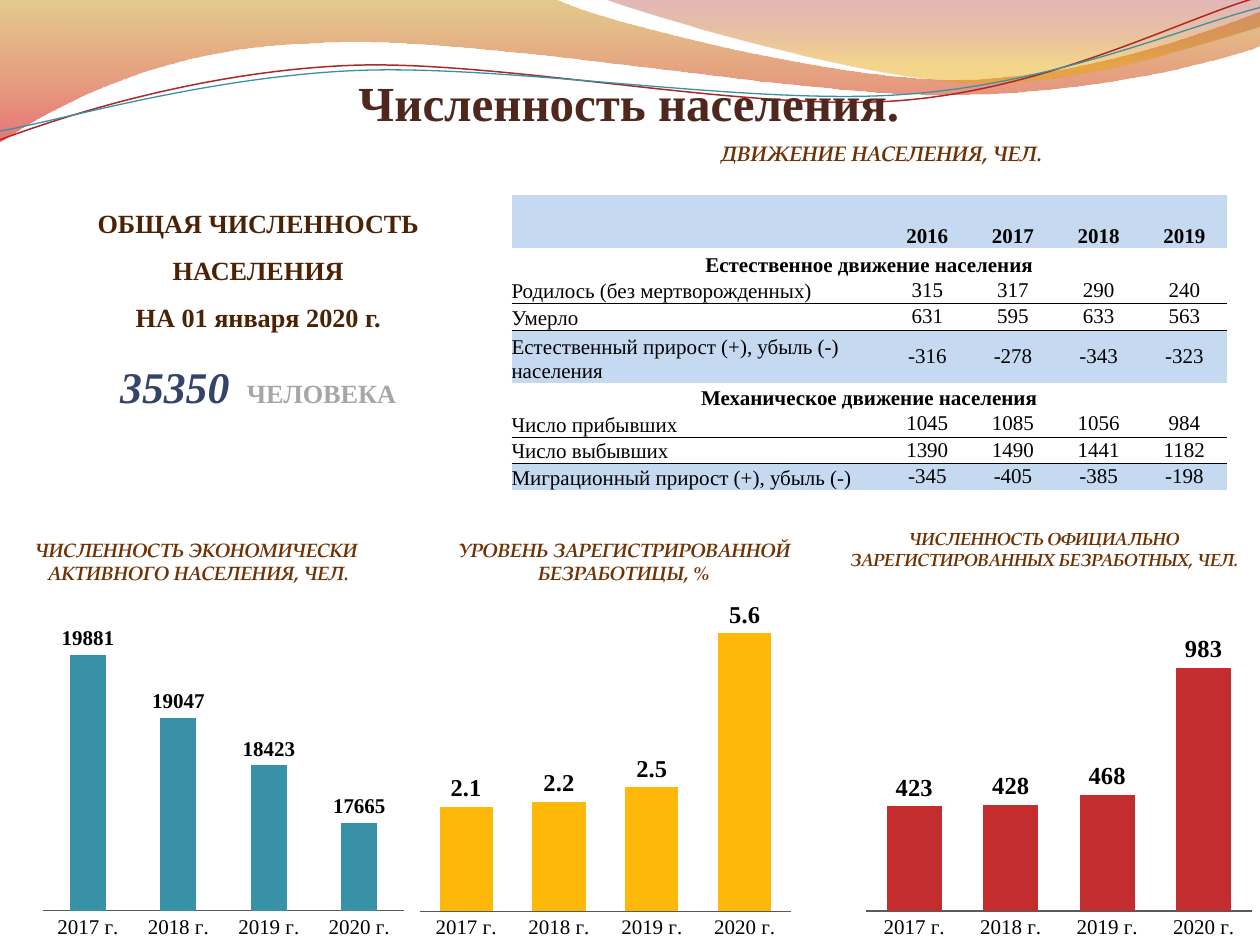
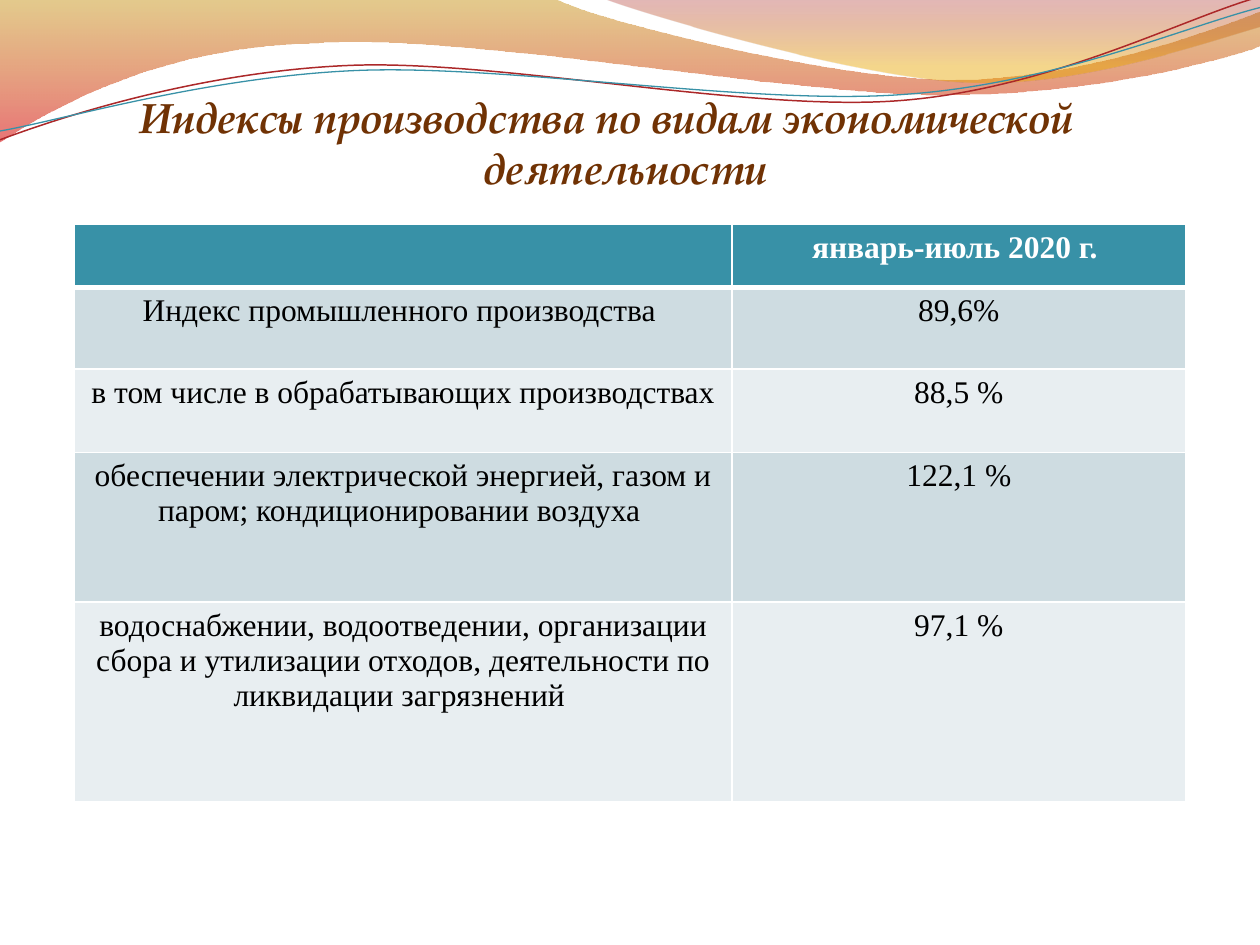
from lxml import etree
from pptx import Presentation
from pptx import util as u
from pptx.chart import data as cd
from pptx.dml.color import RGBColor
from pptx.enum import chart as ce, text as te
from pptx.oxml import parse_xml
from pptx.oxml.ns import nsdecls, qn

# Shared look
SERIF, PAGE = "Times New Roman", "TeX Gyre Pagella"
HEX = dict(gold="C38B00", rose="D60305", wine="A11112", amber="E9A600",
           red="AC2829", teal="3891A7", sun="FEB80A", brick="C32D2E",
           title="4F271C", brown="703204", dark="4B2203", navy="35436A",
           gray="A6A6A6", axis="595959", black="000000", white="FFFFFF",
           sky="C5D9F1", band="CEDCE1", pale="E8EEF1")
HEAD = dict(font=PAGE, color="brown", bold=True, italic=True)
NO_STYLE = "{2D5ABB26-0587-4C30-8999-92F81FD0307C}"
INSET = (.1, .05, .1, .05)

# Waves: start point, then lines (one point) or curves (three points)
BANDS = [
    ([(0, 0), [(4.4, -.01)], [(4.76, .17), (6.64, .63), (7.58, .63)],
      [(8.53, .63), (9.58, .26), (10, .09)], [(10.01, .36)],
      [(9.83, .44), (8.7, .76), (7.46, .75)],
      [(6.22, .75), (3.82, .28), (2.57, .34)],
      [(1.29, .36), (.46, .83), (-.01, 1.13)]],
     [(0, "gold", 45), (100, "rose", 55)]),
    ([(4.79, -.01), [(5.09, .11), (6.82, .62), (7.69, .65)],
      [(8.56, .69), (9.61, .32), (10, .21)], [(10, 0)]],
     [(0, "wine", 30), (80, "amber", 45)]),
]
LINES = [
    ([(0, 1.11), [(.48, .93), (1.58, .57), (2.77, .52)],
      [(3.95, .47), (5.93, .89), (7.13, .8)],
      [(8.33, .71), (9.38, .15), (9.98, -.02)]], "red", .85),
    ([(0, 1.04), [(.47, .96), (1.64, .61), (2.83, .56)],
      [(4.03, .51), (5.97, .84), (7.17, .75)],
      [(8.36, .67), (9.41, .21), (10, .06)]], "teal", .75),
]

# Slide 1 content
TOTAL = ["ОБЩАЯ ЧИСЛЕННОСТЬ НАСЕЛЕНИЯ", "НА 01 января 2020 г.",
         [("35350 ", dict(size=25, color="navy", italic=True)),
          (" ЧЕЛОВЕКА", dict(color="gray"))]]
HEADS = [
    ((.12, 4.22, 2.91, .47), 11,
     ["ЧИСЛЕННОСТЬ ЭКОНОМИЧЕСКИ ", "АКТИВНОГО НАСЕЛЕНИЯ, ЧЕЛ."]),
    ((3.5, 4.22, 2.91, .47), 11,
     ["УРОВЕНЬ ЗАРЕГИСТРИРОВАННОЙ БЕЗРАБОТИЦЫ, %"]),
    ((6.57, 4.14, 3.43, .44), 10,
     ["ЧИСЛЕННОСТЬ ОФИЦИАЛЬНО ЗАРЕГИСТИРОВАННЫХ БЕЗРАБОТНЫХ, ЧЕЛ."]),
]
MOVES = [
    ["", "2016", "2017", "2018", "2019"],
    ["Естественное движение населения"],
    ["Родилось (без мертворожденных)", "315", "317", "290", "240"],
    ["Умерло", "631", "595", "633", "563"],
    ["Естественный прирост (+), убыль (-) населения",
     "-316", "-278", "-343", "-323"],
    ["Механическое движение населения"],
    ["Число прибывших", "1045", "1085", "1056", "984"],
    ["Число выбывших", "1390", "1490", "1441", "1182"],
    ["Миграционный прирост (+), убыль (-)", "-345", "-405", "-385", "-198"],
]
SHADED, RULED = (0, 4, 8), (2, 3, 6, 7)
YEARS = ["2017 г.", "2018 г.", "2019 г.", "2020 г."]
CHARTS = [  # place, values, colour, axis range, gap, label size
    ((.28, 4.77, 2.99, 2.73), (19881, 19047, 18423, 17665),
     "teal", (16500, 20500), 150, 12),
    ((3.27, 4.77, 3.07, 2.73), (2.1, 2.2, 2.5, 5.6), "sun", (0, 6), 75, 14),
    ((6.81, 4.82, 3.19, 2.68), (423, 428, 468, 983),
     "brick", (0, 1200), 75, 14),
]

# Slide 2 content
INDEX = [
    ("", "январь-июль 2020 г. "),
    ("Индекс промышленного производства ", "89,6%"),
    ("в том числе в обрабатывающих производствах", "88,5 %"),
    ("обеспечении электрической энергией, газом и паром; "
     "кондиционировании воздуха ", "122,1 %"),
    ("водоснабжении, водоотведении, организации сбора и утилизации отходов, "
     "деятельности по ликвидации загрязнений ", "97,1 %"),
]


def rgb(name):
    return RGBColor.from_string(HEX[name])


def box(place):
    return [u.Inches(v) for v in place]


def style(font, size=12, face=SERIF, color="black", bold=False,
          italic=False):
    font.name, font.size, font.bold, font.italic = (
        face, u.Pt(size), bold, italic)
    font.color.rgb = rgb(color)


def write(frame, paras, font=SERIF, align="CENTER", space=1, indent=0, **fmt):
    """Fill a frame; a paragraph is a string or a list of (text, format)."""
    for i, runs in enumerate(paras):
        para = frame.add_paragraph() if i else frame.paragraphs[0]
        para.alignment = te.PP_ALIGN[align]
        para.line_spacing = space
        para.space_before = u.Pt(0)
        if indent:
            props = para._p.get_or_add_pPr()
            props.set("marL", str(u.Inches(indent)))
            props.set("indent", str(-u.Inches(indent)))
        for words, extra in [(runs, {})] if isinstance(runs, str) else runs:
            run = para.add_run()
            run.text = words
            style(run.font, face=font, **{**fmt, **extra})


def seat(part, anchor, inset):
    """Set anchor and margins of a text frame or a table cell."""
    part.vertical_anchor = te.MSO_ANCHOR[anchor]
    (part.margin_left, part.margin_top,
     part.margin_right, part.margin_bottom) = box(inset)


def fit(shape, paras, anchor="TOP", inset=INSET, **fmt):
    frame = shape.text_frame
    frame.word_wrap = True
    frame.auto_size = te.MSO_AUTO_SIZE.NONE
    seat(frame, anchor, inset)
    write(frame, paras, **fmt)


def label(slide, place, paras, **fmt):
    fit(slide.shapes.add_textbox(*box(place)), paras, **fmt)


def title(slide, place, words, **fmt):
    shape = slide.shapes.title
    shape.left, shape.top, shape.width, shape.height = box(place)
    fit(shape, [words], **fmt)


def put(cell, words, anchor="TOP", inset=INSET, **fmt):
    seat(cell, anchor, inset)
    write(cell.text_frame, [words], **fmt)


def wave(slide, start, *steps, close=False):
    """Draw an outline through the end points, then bend its curves."""
    pen = slide.shapes.build_freeform(*box(start))
    pen.add_line_segments([box(step[-1]) for step in steps], close=close)
    shape = pen.convert_to_shape()
    shape.shadow.inherit = False
    left, top = shape.left, shape.top
    for line, step in zip(list(shape.element.iter(qn("a:lnTo"))), steps):
        if len(step) == 3:
            line.tag = qn("a:cubicBezTo")
            line.clear()
            for x, y in map(box, step):
                etree.SubElement(line, qn("a:pt"), x=str(x - left),
                                 y=str(y - top))
    return shape


def waves(slide, master):
    """Draw the header waves and hand them to the master."""
    for steps, stops in BANDS:
        shape = wave(slide, *steps, close=True)
        shape.line.fill.background()
        marks = "".join(
            f'<a:gs pos="{pos * 1000}"><a:srgbClr val="{HEX[tone]}">'
            f'<a:alpha val="{alpha * 1000}"/></a:srgbClr></a:gs>'
            for pos, tone, alpha in stops)
        shape.fill.background()
        blank = shape.element.spPr.find(qn("a:noFill"))
        blank.getparent().replace(blank, parse_xml(
            f'<a:gradFill {nsdecls("a")}><a:gsLst>{marks}</a:gsLst>'
            '<a:lin ang="5400000" scaled="0"/></a:gradFill>'))
        master.shapes.element.append(shape.element)
    for steps, tone, width in LINES:
        shape = wave(slide, *steps)
        shape.fill.background()
        shape.line.color.rgb, shape.line.width = rgb(tone), u.Pt(width)
        master.shapes.element.append(shape.element)


def grid(slide, spot, cols, rows):
    shape = slide.shapes.add_table(len(rows), len(cols), *box(spot),
                                   *box((sum(cols), sum(rows))))
    table = shape.table
    table._tbl.tblPr.find(qn("a:tableStyleId")).text = NO_STYLE
    for parts, sizes, side in ((table.columns, cols, "width"),
                               (table.rows, rows, "height")):
        for part, size in zip(parts, sizes):
            setattr(part, side, u.Inches(size))
    return table


def paint(cell, fill=None, **edges):
    """Set the borders (side=(colour, points)), then the fill."""
    props = cell._tc.get_or_add_tcPr()
    for side in "LRTB":
        line = etree.SubElement(props, qn("a:ln" + side))
        if side in edges:
            tone, width = edges[side]
            line.set("w", str(u.Pt(width)))
            solid = etree.SubElement(line, qn("a:solidFill"))
            etree.SubElement(solid, qn("a:srgbClr"), val=HEX[tone])
        else:
            etree.SubElement(line, qn("a:noFill"))
    if fill:
        cell.fill.solid()
        cell.fill.fore_color.rgb = rgb(fill)
    else:
        cell.fill.background()


def bars(slide, place, vals, tone, span, gap, size):
    data = cd.CategoryChartData()
    data.categories = YEARS
    data.add_series("Series 1", vals)
    chart = slide.shapes.add_chart(ce.XL_CHART_TYPE.COLUMN_CLUSTERED,
                                   *box(place), data).chart
    chart.has_legend = chart.has_title = False
    style(chart.font, 10, PAGE)
    years, scale = chart.category_axis, chart.value_axis
    years.major_tick_mark = ce.XL_TICK_MARK.NONE
    years.format.line.color.rgb = rgb("axis")
    style(years.tick_labels.font)
    scale.visible = scale.has_major_gridlines = False
    scale.minimum_scale, scale.maximum_scale = span
    plot = chart.plots[0]
    plot.gap_width, plot.vary_by_categories = gap, False
    fill = plot.series[0].format.fill
    fill.solid()
    fill.fore_color.rgb = rgb(tone)
    plot.has_data_labels = True
    tags = plot.data_labels
    tags.show_value = True
    tags.position = ce.XL_LABEL_POSITION.OUTSIDE_END
    style(tags.font, size, bold=True)


def people(slide):
    title(slide, (.49, 0, 9, 1.04), "Численность населения.", size=28,
          color="title", bold=True, anchor="BOTTOM", inset=(0, .05, 0, 0))
    label(slide, (.2, 1.47, 3.7, 1.87), TOTAL, size=15, color="dark",
          bold=True, space=1.5)
    label(slide, (5.08, 1.07, 3.34, .3), ["ДВИЖЕНИЕ НАСЕЛЕНИЯ, ЧЕЛ."],
          size=12, inset=(.59, .05, .1, .05), **HEAD)
    for place, size, paras in HEADS:
        label(slide, place, paras, size=size, **HEAD)

    # Population movement table
    table = grid(slide, (4.06, 1.55), [2.96] + [.68] * 4,
                 [.42, .23, .21, .21, .42, .22] + [.21] * 3)
    for r, row in enumerate(MOVES):
        section = len(row) == 1
        if section:
            table.cell(r, 0).merge(table.cell(r, 4))
        edges = {side: ("black", .5) for side, ruled in
                 (("T", r - 1 in RULED), ("B", r in RULED)) if ruled}
        for c in range(5):
            paint(table.cell(r, c), "sky" if r in SHADED else None, **edges)
        top = r == 0 or section
        for c, words in enumerate(row):
            put(table.cell(r, c), words, inset=(0, 0, 0, 0), bold=top,
                align="CENTER" if c or top else "LEFT",
                anchor="MIDDLE" if c and not top else "BOTTOM")

    for item in CHARTS:
        bars(slide, *item)


def output(slide):
    title(slide, (.12, .68, 9.39, .71),
          "Индексы производства по видам экономической деятельности",
          size=24, indent=.3, **HEAD)
    table = grid(slide, (.59, 1.78), [5.22, 3.6], [.5, .65, .66, 1.19, 1.58])
    for r, row in enumerate(INDEX):
        edges = {side: ("white", 1) for side in "LRTB"}
        if r < 2:
            edges["T" if r else "B"] = ("white", 3)
        for c, words in enumerate(row):
            cell = table.cell(r, c)
            put(cell, words, size=18, bold=r == 0,
                color="black" if r else "white")
            paint(cell, ("pale", "band")[r % 2] if r else "teal", **edges)


def main():
    deck = Presentation()
    deck.slide_width, deck.slide_height = u.Inches(10), u.Inches(7.5)
    first, second = [deck.slides.add_slide(deck.slide_layouts[5])
                     for _ in range(2)]
    waves(first, deck.slide_master)
    people(first)
    output(second)
    deck.save("out.pptx")


if __name__ == "__main__":
    main()
